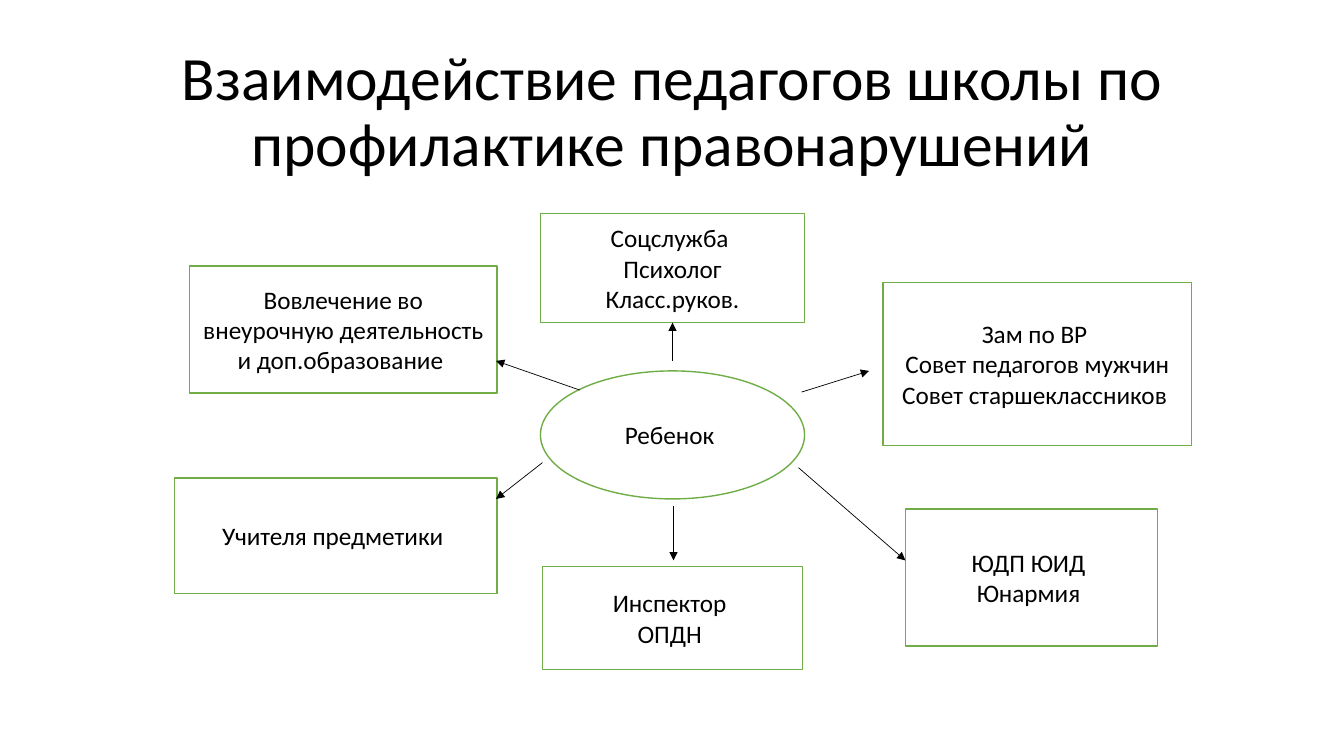
from lxml import etree
from pptx import Presentation
from pptx.dml.color import RGBColor
from pptx.enum.shapes import MSO_CONNECTOR as Connector, MSO_SHAPE as Shape
from pptx.enum.text import MSO_ANCHOR as Anchor, MSO_AUTO_SIZE as AutoSize, PP_ALIGN as Align
from pptx.oxml.ns import qn
from pptx.util import Emu, Pt

PX = 9144  # 100 px to the inch
BOTTOM = 2


def px(length):
    return Emu(length * PX)


def color(hex_string):
    return RGBColor.from_string(hex_string)


class Diagram:
    font = "Calibri"
    ink = "000000"
    paper = "FFFFFF"
    border = "70AD47"

    def __init__(self, page):
        self.page = page

    def set_text(self, frame, text, size, spacing=1.0):
        frame.text = text
        frame.word_wrap = True
        frame.auto_size = AutoSize.NONE
        frame.vertical_anchor = Anchor.MIDDLE
        for para in frame.paragraphs:
            para.alignment = Align.CENTER
            para.line_spacing = spacing
            for span in para.runs:
                span.font.name = self.font
                span.font.size = Pt(size)
                span.font.color.rgb = color(self.ink)

    def title(self, text, left, top, width, height):
        title = self.page.shapes.title
        title.left, title.top = px(left), px(top)
        title.width, title.height = px(width), px(height)
        self.set_text(title.text_frame, text, 44, 0.9)

    def node(self, text, left, top, width, height, kind=Shape.RECTANGLE):
        node = self.page.shapes.add_shape(kind, px(left), px(top), px(width), px(height))
        node.shadow.inherit = False
        node.fill.solid()
        node.fill.fore_color.rgb = color(self.paper)
        node.line.color.rgb = color(self.border)
        node.line.width = Pt(1)
        self.set_text(node.text_frame, text, 18)
        return node

    def arrow(self, x1, y1, x2, y2):
        arrow = self.page.shapes.add_connector(
            Connector.STRAIGHT, px(x1), px(y1), px(x2), px(y2))
        arrow.line.color.rgb = color(self.ink)
        arrow.line.width = Pt(0.5)
        properties = arrow.element.spPr
        etree.SubElement(properties.find(qn("a:ln")), qn("a:tailEnd"), type="triangle")
        etree.SubElement(properties, qn("a:effectLst"))
        return arrow


def main():
    deck = Presentation()
    deck.slide_width, deck.slide_height = px(1333), px(750)
    title_only = deck.slide_layouts[5]
    diagram = Diagram(deck.slides.add_slide(title_only))

    diagram.title("Взаимодействие педагогов школы по профилактике правонарушений",
                  92, 40, 1150, 145)
    diagram.node("Ребенок ", 536, 368, 262, 127, Shape.OVAL)
    support = diagram.node("Соцслужба \nПсихолог\nКласс.руков.", 536, 212, 262, 108)
    for text, *place in (
        ("Вовлечение во внеурочную деятельность и доп.образование ", 188, 264, 305, 126),
        ("Учителя предметики ", 173, 474, 320, 115),
        ("Инспектор \nОПДН ", 538, 562, 258, 102),
        ("ЮДП ЮИД \nЮнармия ", 898, 505, 250, 136),
        ("Зам по ВР \nСовет педагогов мужчин\nСовет старшеклассников ", 876, 280, 306, 162),
    ):
        diagram.node(text, *place)

    diagram.arrow(667, 358, 667, 320).end_connect(support, BOTTOM)
    for ends in (
        (795, 389, 862, 368),
        (792, 464, 898, 556),
        (668, 502, 668, 556),
        (538, 459, 492, 495),
        (575, 387, 492, 358),
    ):
        diagram.arrow(*ends)

    deck.save("out.pptx")


if __name__ == "__main__":
    main()
